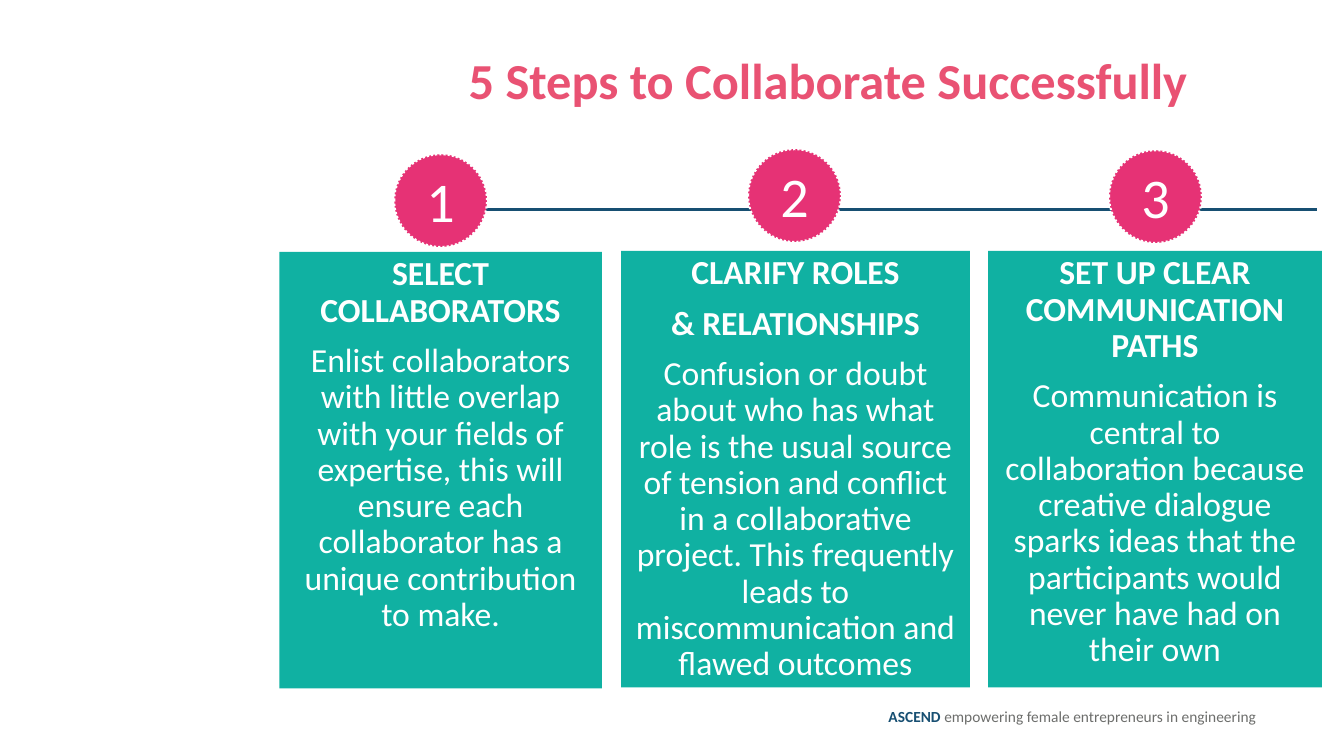
from pptx import Presentation
from pptx.dml.color import RGBColor
from pptx.enum.dml import MSO_LINE
from pptx.enum.shapes import MSO_CONNECTOR, MSO_SHAPE
from pptx.enum.text import MSO_ANCHOR, PP_ALIGN
from pptx.oxml.ns import qn
from pptx.util import Inches, Pt
from lxml import etree

STRAIGHT = MSO_CONNECTOR.STRAIGHT
RECTANGLE, OVAL = MSO_SHAPE.RECTANGLE, MSO_SHAPE.OVAL
DOTTED = MSO_LINE.ROUND_DOT
TOP, MIDDLE = MSO_ANCHOR.TOP, MSO_ANCHOR.MIDDLE
LEFT, CENTER, RIGHT = PP_ALIGN.LEFT, PP_ALIGN.CENTER, PP_ALIGN.RIGHT

COLORS = {
    "navy": "174F72", "gray": "6D6E6C", "coral": "E95273",
    "teal": "10B1A2", "pink": "E63275", "white": "FFFFFF",
}
FONT = "Calibri"
CARD_HEIGHT = 4.33
BADGE_SIZE = 0.92
TIMELINE_Y = 2.08

STEPS = [
    (2.77, 2.5, 3.2, 3.91, 1.53, ["SELECT COLLABORATORS"],
     "Enlist collaborators with little overlap with your fields of expertise, "
     "this will ensure each collaborator has a unique contribution to make."),
    (6.16, 2.49, 3.46, 7.42, 1.48, ["CLARIFY ROLES", "& RELATIONSHIPS"],
     "Confusion or doubt about who has what role is the usual source of tension "
     "and conflict in a collaborative project. This frequently leads to "
     "miscommunication and flawed outcomes"),
    (9.8, 2.49, 3.31, 11, 1.49, ["SET UP CLEAR COMMUNICATION PATHS"],
     "Communication is central to collaboration because creative dialogue sparks "
     "ideas that the participants would never have had on their own"),
]


def rgb(name):
    return RGBColor.from_string(COLORS[name])


def write(frame, lines, size, color, align, anchor=TOP, spacing=None):
    frame.word_wrap = True
    frame.vertical_anchor = anchor
    for index, (text, bold) in enumerate(lines):
        paragraph = frame.paragraphs[0] if index == 0 else frame.add_paragraph()
        paragraph.text = text
        paragraph.alignment = align
        paragraph.line_spacing = spacing
        if index:
            paragraph.space_before = Pt(10)
        paragraph.font.name = FONT
        paragraph.font.size = Pt(size)
        paragraph.font.bold = bold
        paragraph.font.color.rgb = rgb(color)


deck = Presentation()
deck.slide_width = Inches(13.33)
deck.slide_height = Inches(7.5)
slide = deck.slides.add_slide(deck.slide_layouts[6])
shapes = slide.shapes

footer = shapes.add_textbox(Inches(0.31), Inches(6.97), Inches(12.25), Inches(0.45))
footer.text_frame.word_wrap = True
credit = footer.text_frame.paragraphs[0]
credit.alignment = RIGHT
credit.font.name = FONT
credit.font.size = Pt(11)
for words, color, bold in [
    ("ASCEND ", "navy", True),
    ("empowering female entrepreneurs in engineering", "gray", False),
]:
    run = credit.add_run()
    run.text = words
    run.font.bold = bold
    run.font.color.rgb = rgb(color)

timeline = shapes.add_connector(
    STRAIGHT, Inches(4.12), Inches(TIMELINE_Y), Inches(13.06), Inches(TIMELINE_Y))
timeline.line.color.rgb = rgb("navy")
timeline.line.width = Pt(2.25)
etree.SubElement(timeline._element.spPr, qn("a:effectLst"))

title = shapes.add_textbox(Inches(4.55), Inches(0.51), Inches(8.1), Inches(0.76))
write(title.text_frame, [("5 Steps to Collaborate Successfully", True)],
      36, "coral", LEFT, spacing=0.9)

for number, step in enumerate(STEPS, start=1):
    card_x, card_y, card_width, badge_x, badge_y, headings, advice = step

    card = shapes.add_shape(RECTANGLE, Inches(card_x), Inches(card_y),
                            Inches(card_width), Inches(CARD_HEIGHT))
    card.shadow.inherit = False
    card.fill.solid()
    card.fill.fore_color.rgb = rgb("teal")
    card.line.fill.background()
    lines = [(heading, True) for heading in headings] + [(advice, False)]
    write(card.text_frame, lines, 24, "white", CENTER, spacing=0.9)

    badge = shapes.add_shape(OVAL, Inches(badge_x), Inches(badge_y),
                             Inches(BADGE_SIZE), Inches(BADGE_SIZE))
    badge.shadow.inherit = False
    badge.fill.solid()
    badge.fill.fore_color.rgb = rgb("pink")
    badge.line.color.rgb = rgb("white")
    badge.line.width = Pt(1.5)
    badge.line.dash_style = DOTTED
    write(badge.text_frame, [(str(number), False)], 40, "white", CENTER, MIDDLE)

deck.save("out.pptx")
